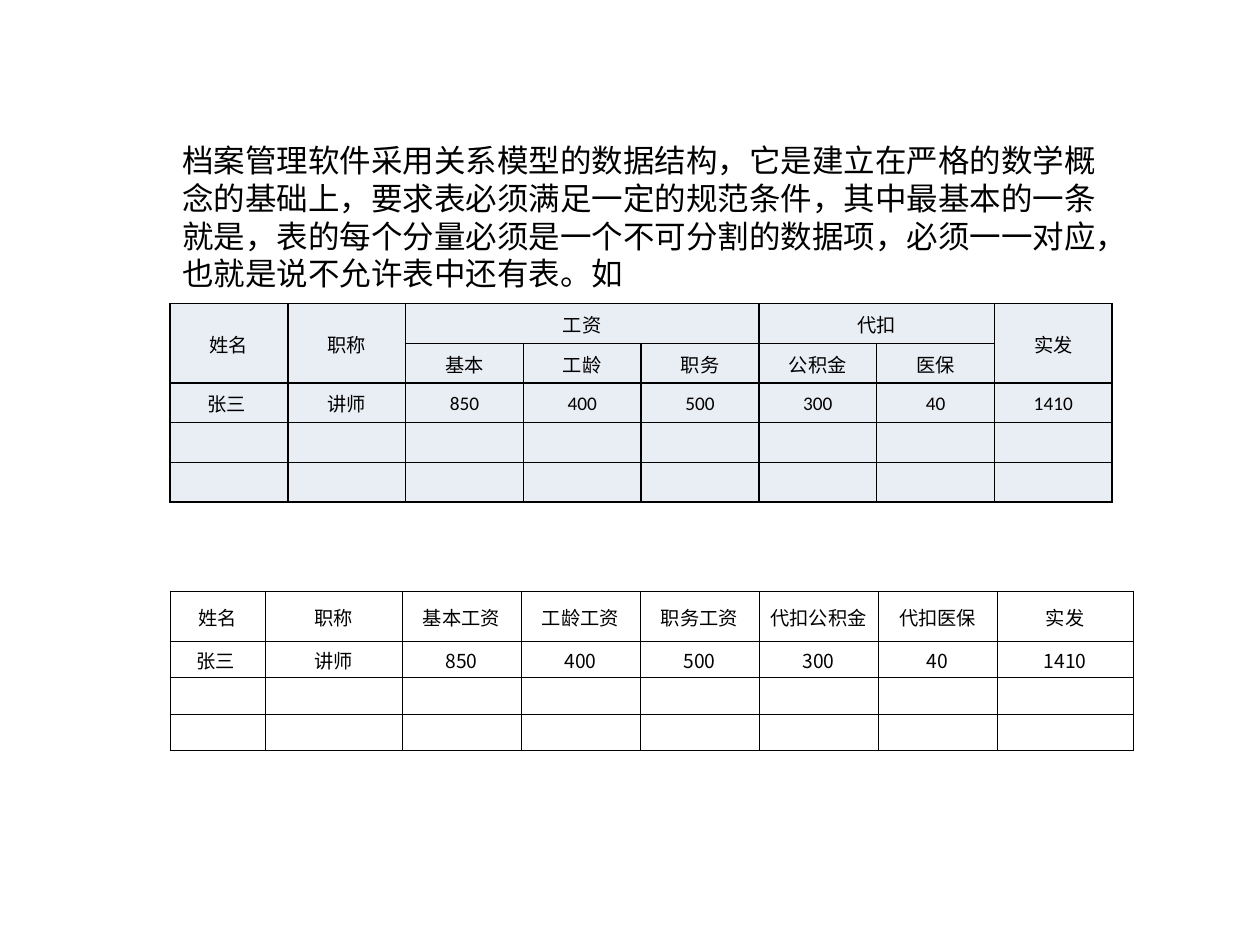
import pptx
import pptx.util
import pptx.dml.color
import pptx.enum.text
import pptx.oxml.ns
import lxml.etree

Inches = pptx.util.Inches
Pt = pptx.util.Pt
BLACK = pptx.dml.color.RGBColor(0x00, 0x00, 0x00)
PALE = pptx.dml.color.RGBColor(0xE9, 0xED, 0xF4)
LATIN = "Calibri"
HAN = "Noto Sans CJK SC"

INTRO = (
    "档案管理软件采用关系模型的数据结构，它是建立在严格的数学概念的基础上，"
    "要求表必须满足一定的规范条件，其中最基本的一条就是，"
    "表的每个分量必须是一个不可分割的数据项，必须一一对应，"
    "也就是说不允许表中还有表。如"
)
PERSON = ["张三 ", "讲师", "850", "400", "500", "300", "40", "1410"]
EMPTY = [""] * len(PERSON)
NESTED = [
    ["姓名", "职称", "工资", "", "", "代扣", "", "实发"],
    ["", "", "基本", "工龄", "职务", "公积金", "医保", ""],
    PERSON, EMPTY, EMPTY,
]
FLAT = [
    ["姓名", "职称", "基本工资", "工龄工资", "职务工资", "代扣公积金", "代扣医保", "实发"],
    PERSON, EMPTY, EMPTY,
]
# First and last cell of each merged heading, as (row, column)
SPANS = [
    ((0, 0), (1, 0)), ((0, 1), (1, 1)), ((0, 2), (0, 4)),
    ((0, 5), (0, 6)), ((0, 7), (1, 7)),
]


def add_node(parent, tag, **attrs):
    return lxml.etree.SubElement(parent, pptx.oxml.ns.qn(tag), **attrs)


def set_font(font, name, size):
    font.name = name
    font.size = Pt(size)
    font.color.rgb = BLACK


def draw_edges(cell, width):
    props = cell._tc.get_or_add_tcPr()
    for side in ("a:lnL", "a:lnR", "a:lnT", "a:lnB"):
        line = add_node(props, side, w=str(Pt(width)))
        paint = add_node(line, "a:solidFill")
        add_node(paint, "a:srgbClr", val=str(BLACK))


def fill_cell(cell, text, font, edge, fill):
    cell.margin_left = cell.margin_right = cell.margin_top = Inches(0.01)
    cell.margin_bottom = 0
    cell.vertical_anchor = pptx.enum.text.MSO_ANCHOR.MIDDLE
    draw_edges(cell, edge)
    if fill is None:
        cell.fill.background()
    else:
        cell.fill.solid()
        cell.fill.fore_color.rgb = fill
    para = cell.text_frame.paragraphs[0]
    para.alignment = pptx.enum.text.PP_ALIGN.CENTER
    if text:
        para.text = text
        set_font(para.runs[0].font, font, 11)
    else:
        # Keeps an empty row from growing to the default text size
        add_node(para._p, "a:endParaRPr", sz="1100")


def add_grid(slide, left, top, widths, heights, rows, font, edge, fill=None, spans=()):
    frame = slide.shapes.add_table(
        len(rows), len(widths), Inches(left), Inches(top),
        Inches(sum(widths)), Inches(sum(heights)))
    table = frame.table
    table.first_row = table.horz_banding = False
    for col, width in zip(table.columns, widths):
        col.width = Inches(width)
    for row, height in zip(table.rows, heights):
        row.height = Inches(height)
    for r, texts in enumerate(rows):
        for c, text in enumerate(texts):
            fill_cell(table.cell(r, c), text, font, edge, fill)
    for first, last in spans:
        table.cell(*first).merge(table.cell(*last))


def add_intro(slide, left, top, width, height):
    box = slide.shapes.add_textbox(
        Inches(left), Inches(top), Inches(width), Inches(height))
    frame = box.text_frame
    frame.word_wrap = True
    frame.auto_size = pptx.enum.text.MSO_AUTO_SIZE.SHAPE_TO_FIT_TEXT
    frame.text = INTRO
    set_font(frame.paragraphs[0].runs[0].font, LATIN, 18)


def main():
    deck = pptx.Presentation()
    deck.slide_width = Inches(10)
    deck.slide_height = Inches(7.5)
    slide = deck.slides.add_slide(deck.slide_layouts[6])
    left = 1.35
    add_grid(slide, left, 2.41, [0.935] * 8, [0.315] * 5, NESTED,
             LATIN, 1, PALE, SPANS)
    add_intro(slide, left, 1.07, 7.56, 1.31)
    add_grid(slide, left, 4.69, [0.76, 1.08] + [0.945] * 5 + [1.08],
             [0.4] + [0.29] * 3, FLAT, HAN, 0.5)
    deck.save("out.pptx")


if __name__ == "__main__":
    main()
